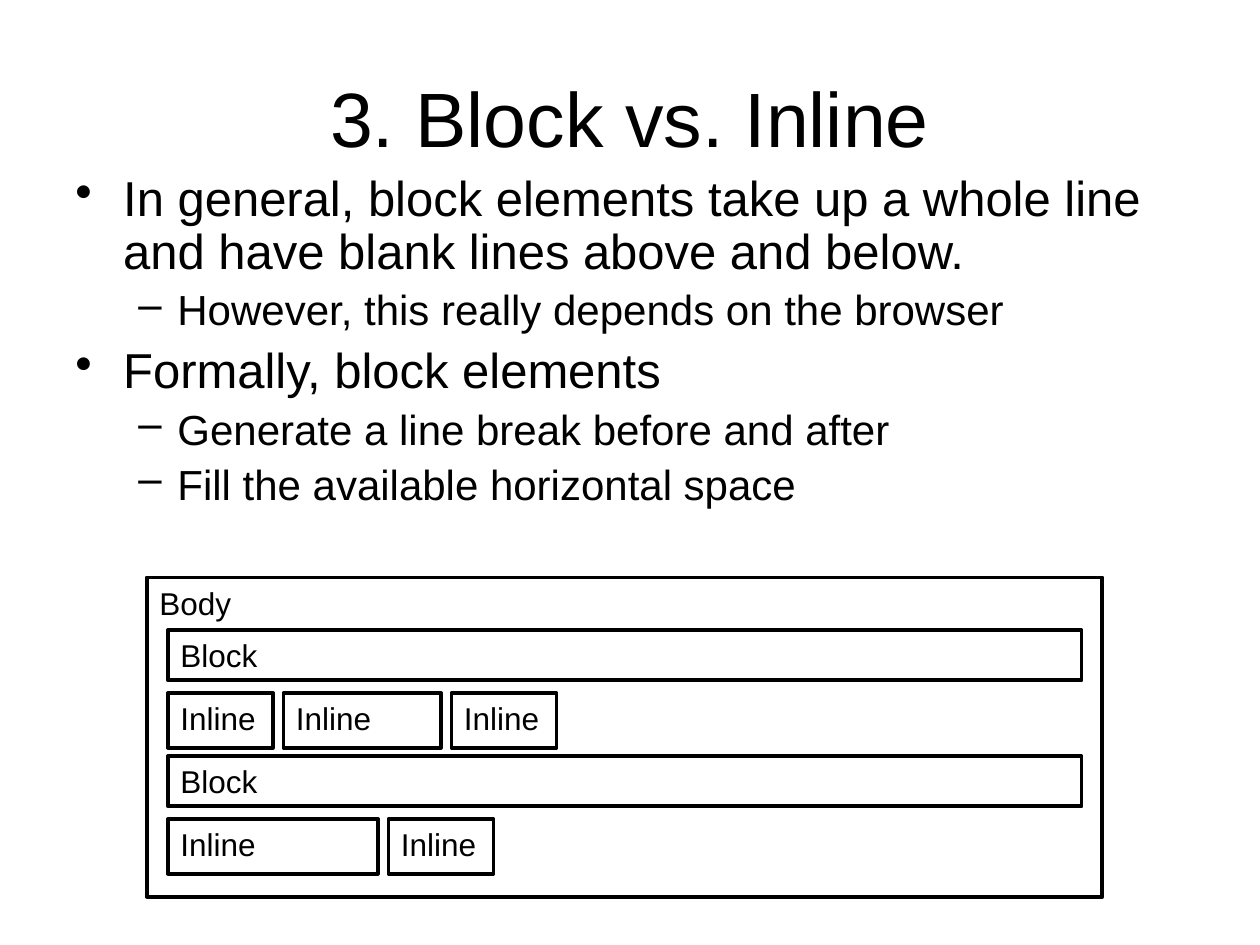
import pptx
import pptx.dml.color
import pptx.enum.shapes
import pptx.enum.text
import pptx.oxml.ns
import pptx.util
from lxml import etree

INK = {"text": "000000", "line": "000000"}
UNIT = pptx.util.Inches(1) / 12  # the slide is a grid of 120 columns by 90 rows
FONT = "Arial"

# Per level: font size, space before, left margin, hanging indent, bullet
LEVELS = [
    {"size": 28, "space": 6.4, "left": 0.38, "hang": 0.38, "mark": "•"},
    {"size": 24, "space": 5.5, "left": 0.81, "hang": 0.31, "mark": "–"},
]
POINTS = [
    (0, "In general, block elements take up a whole line "
        "and have blank lines above and below."),
    (1, "However, this really depends on the browser"),
    (0, "Formally, block elements"),
    (1, "Generate a line break before and after"),
    (1, "Fill the available horizontal space"),
]
# Each row of the page model: label and widths in columns
ROWS = [
    ("Block", [87]),
    ("Inline", [10, 15, 10]),
    ("Block", [87]),
    ("Inline", [20, 10]),
]
TALL = {"Block": 4.8, "Inline": 5.2}


def grid(*box):
    return [pptx.util.Emu(round(n * UNIT)) for n in box]


def color(name):
    return pptx.dml.color.RGBColor.from_string(INK[name])


def style(item, **values):
    for name, value in values.items():
        setattr(item, name, value)


def write(para, text, size):
    run = para.add_run()
    run.text = text
    style(run.font, name=FONT, size=pptx.util.Pt(size))
    run.font.color.rgb = color("text")


def add_text(slide, box, anchor):
    frame = slide.shapes.add_textbox(*grid(*box)).text_frame
    style(frame, word_wrap=True, vertical_anchor=anchor)
    return frame


def add_title(slide, box):
    frame = add_text(slide, box, pptx.enum.text.MSO_ANCHOR.MIDDLE)
    para = frame.paragraphs[0]
    para.alignment = pptx.enum.text.PP_ALIGN.CENTER
    write(para, "3. Block vs. Inline", 44)


def add_mark(para, level):
    """Give a paragraph its bullet and hanging indent."""
    props = para._p.get_or_add_pPr()
    props.set("marL", str(pptx.util.Inches(level["left"])))
    props.set("indent", str(-pptx.util.Inches(level["hang"])))
    mark = etree.SubElement(props, pptx.oxml.ns.qn("a:buChar"))
    mark.set("char", level["mark"])


def add_points(slide, box):
    frame = add_text(slide, box, pptx.enum.text.MSO_ANCHOR.TOP)
    for i, (depth, text) in enumerate(POINTS):
        para = frame.add_paragraph() if i else frame.paragraphs[0]
        level = LEVELS[depth]
        space = pptx.util.Pt(level["space"] if i else 0)
        style(para, level=depth, line_spacing=0.9, space_before=space)
        add_mark(para, level)
        write(para, text, level["size"])


def add_box(slide, box, label):
    kind = pptx.enum.shapes.MSO_SHAPE.RECTANGLE
    shape = slide.shapes.add_shape(kind, *grid(*box))
    shape.shadow.inherit = False
    shape.fill.background()
    shape.line.color.rgb = color("line")
    shape.line.width = pptx.util.Pt(2.25)
    frame = shape.text_frame
    style(frame, word_wrap=True,
          vertical_anchor=pptx.enum.text.MSO_ANCHOR.TOP)
    para = frame.paragraphs[0]
    para.alignment = pptx.enum.text.PP_ALIGN.LEFT
    write(para, label, 18)


def add_model(slide, box):
    """Draw the page body with its rows of block and inline boxes."""
    left, top = box[:2]
    add_box(slide, box, "Body")
    for i, (label, widths) in enumerate(ROWS):
        x, y = left + 2, top + 5 + 6 * i
        for width in widths:
            add_box(slide, (x, y, width, TALL[label]), label)
            x += width + 1


def main():
    deck = pptx.Presentation()
    deck.slide_width, deck.slide_height = grid(120, 90)
    slide = deck.slides.add_slide(deck.slide_layouts[6])
    add_title(slide, (6, 3.6, 108, 15))
    add_points(slide, (6, 16, 108, 41))
    add_model(slide, (14, 55, 91, 30.4))
    deck.save("out.pptx")


if __name__ == "__main__":
    main()
